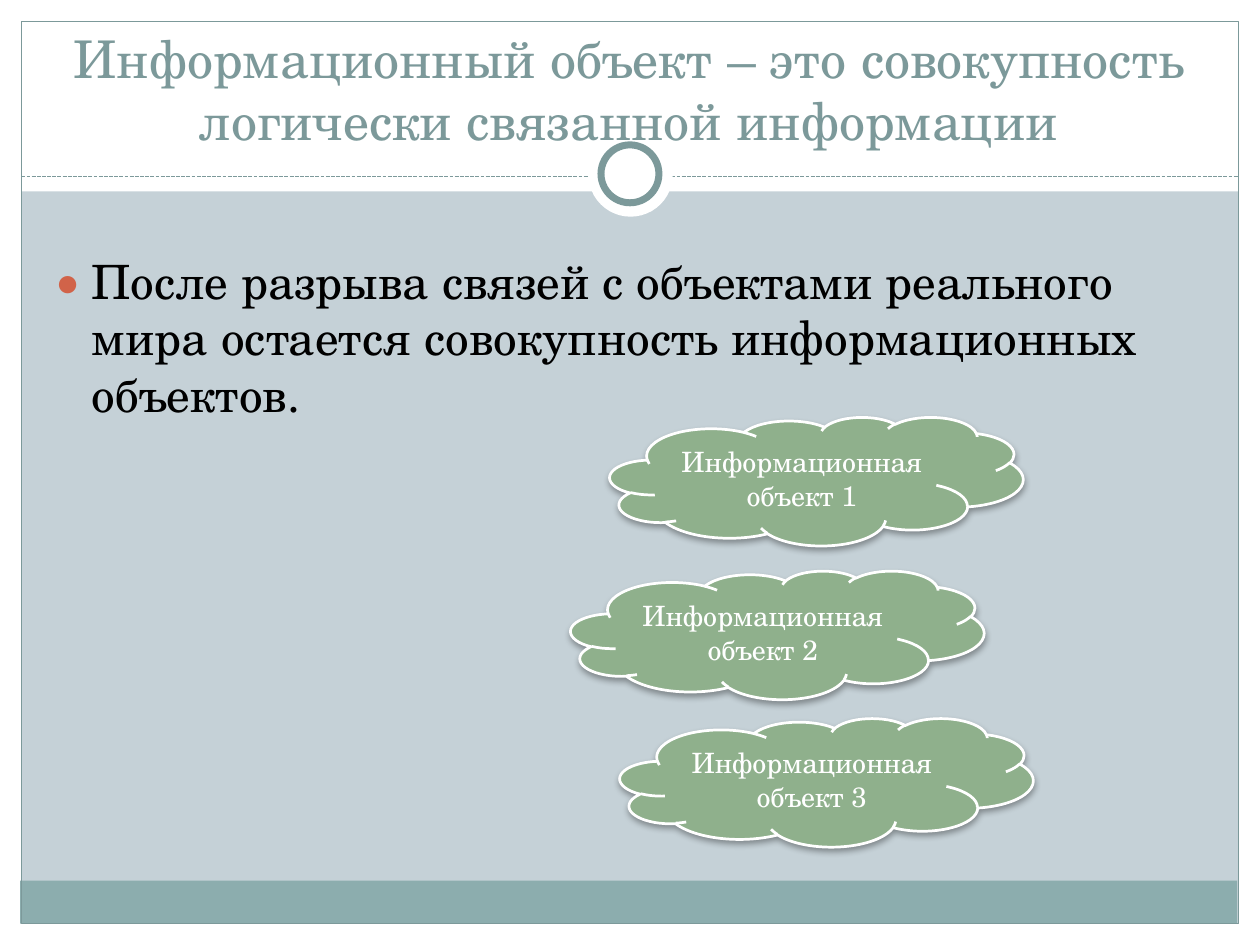
from lxml.etree import SubElement
from pptx import Presentation
from pptx.dml.color import RGBColor
from pptx.enum.dml import MSO_LINE
from pptx.enum.shapes import MSO_CONNECTOR, MSO_SHAPE
from pptx.enum.text import MSO_ANCHOR, PP_ALIGN
from pptx.oxml.ns import qn
from pptx.util import Inches, Pt

FONT = "TeX Gyre Schola"
WHITE = RGBColor(0xFF, 0xFF, 0xFF)
BLACK = RGBColor(0x00, 0x00, 0x00)
BACKGROUND = RGBColor(0xC5, 0xD1, 0xD7)
TEAL = RGBColor(0x7C, 0x99, 0x9A)
FOOTER = RGBColor(0x8C, 0xAD, 0xAE)
GREEN = RGBColor(0x8F, 0xB0, 0x8C)
BULLET = RGBColor(0xD1, 0x63, 0x49)

MARGIN = 0.17
CLOUD_SIZE = (3.28, 1.02)
CLOUD_POSITIONS = [(4.84, 3.31), (4.53, 4.53), (4.92, 5.7)]


def add_shape(s, kind, box, fill=None, line=None, width=0.75):
    sp = s.shapes.add_shape(kind, *map(Inches, box))
    sp.shadow.inherit = False
    if fill is None:
        sp.fill.background()
    else:
        sp.fill.solid()
        sp.fill.fore_color.rgb = fill
    if line is None:
        sp.line.fill.background()
    else:
        sp.line.color.rgb = line
        sp.line.width = Pt(width)
    return sp


def add_dashed_line(s, x1, x2, y):
    line = s.shapes.add_connector(
        MSO_CONNECTOR.STRAIGHT, Inches(x1), Inches(y), Inches(x2), Inches(y))
    line.line.color.rgb = TEAL
    line.line.width = Pt(0.75)
    line.line.dash_style = MSO_LINE.SQUARE_DOT
    SubElement(line._element.spPr, qn("a:effectLst"))


def set_text(sp, text, size, color, align, anchor):
    tf = sp.text_frame
    tf.word_wrap = True
    tf.vertical_anchor = anchor
    p = tf.paragraphs[0]
    p.text = text
    p.alignment = align
    font = p.runs[0].font
    font.name, font.size, font.color.rgb = FONT, Pt(size), color
    return p


def add_text(s, box, *style):
    return set_text(s.shapes.add_textbox(*map(Inches, box)), *style)


def set_bullet(p, indent):
    pPr = p._p.get_or_add_pPr()
    pPr.set("marL", str(Inches(indent)))
    pPr.set("indent", str(-Inches(indent)))
    color = SubElement(pPr, qn("a:buClr"))
    SubElement(color, qn("a:srgbClr"), val=str(BULLET))
    SubElement(pPr, qn("a:buSzPct"), val="85000")
    SubElement(pPr, qn("a:buFont"), typeface=FONT)
    SubElement(pPr, qn("a:buChar"), char="●")


def set_shadow(sp):
    effects = sp._element.spPr.find(qn("a:effectLst"))
    shadow = SubElement(effects, qn("a:outerShdw"), blurRad=str(Pt(4)),
                        dist=str(Pt(2)), dir="5400000", rotWithShape="0")
    color = SubElement(shadow, qn("a:srgbClr"), val=str(BLACK))
    SubElement(color, qn("a:alpha"), val="35000")


def add_cloud(s, position, text):
    sp = add_shape(s, MSO_SHAPE.CLOUD, (*position, *CLOUD_SIZE), GREEN, WHITE, 1.57)
    set_shadow(sp)
    set_text(sp, text, 16, WHITE, PP_ALIGN.CENTER, MSO_ANCHOR.MIDDLE)


def add_frame(s):
    # White margins and header
    for box in [(0, 7.33, 10, MARGIN), (0, 0, 10, 1.52),
                (0, 0, MARGIN, 7.5), (9.83, 0, MARGIN, 7.5)]:
        add_shape(s, MSO_SHAPE.RECTANGLE, box, WHITE)
    # Footer band and outline
    add_shape(s, MSO_SHAPE.RECTANGLE, (0.16, 6.99, 9.66, 0.34), FOOTER)
    add_shape(s, MSO_SHAPE.RECTANGLE, (MARGIN, MARGIN, 9.66, 7.16), line=TEAL)
    # Divider with ring
    add_dashed_line(s, MARGIN, 9.83, 1.4)
    add_shape(s, MSO_SHAPE.OVAL, (4.67, 1.05, 0.67, 0.67), WHITE)
    add_shape(s, MSO_SHAPE.OVAL, (4.77, 1.15, 0.46, 0.46), WHITE, TEAL, 4)


def main():
    prs = Presentation()
    prs.slide_width, prs.slide_height = Inches(10), Inches(7.5)
    s = prs.slides.add_slide(prs.slide_layouts[6])
    s.background.fill.solid()
    s.background.fill.fore_color.rgb = BACKGROUND
    add_frame(s)

    # Title and body
    add_text(s, (0.33, 0.25, 9.33, 1),
             "Информационный объект – это совокупность логически связанной информации",
             29.7, TEAL, PP_ALIGN.CENTER, MSO_ANCHOR.BOTTOM)
    body = add_text(s, (0.33, 1.95, 9.3, 4.72),
                    "После разрыва связей с объектами реального мира остается "
                    "совокупность информационных объектов.",
                    27, BLACK, PP_ALIGN.LEFT, MSO_ANCHOR.TOP)
    body.space_before = Pt(5.4)
    set_bullet(body, 0.3)

    # Information objects
    for number, position in enumerate(CLOUD_POSITIONS, 1):
        add_cloud(s, position, f"Информационная объект {number}")

    prs.save("out.pptx")


if __name__ == "__main__":
    main()
